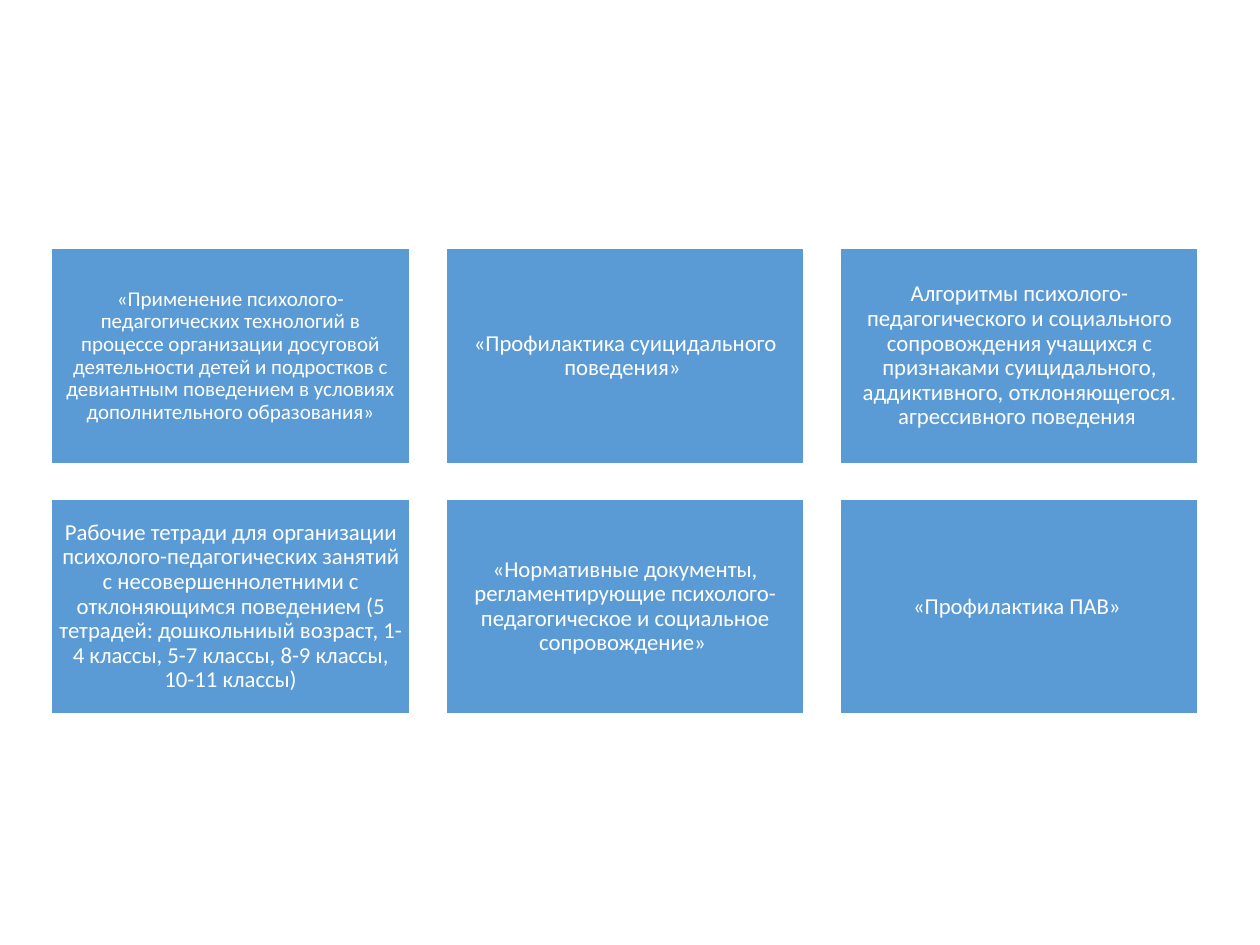
from pptx import Presentation
from pptx.dml.color import RGBColor
from pptx.enum import shapes, text
from pptx.util import Inches, Pt

BLUE = RGBColor(0x5B, 0x9B, 0xD5)
WHITE = RGBColor(0xFF, 0xFF, 0xFF)

# Card wording and text size, row by row
CARDS = [
    ("«Применение психолого-педагогических технологий в процессе организации "
     "досуговой деятельности детей и подростков с девиантным поведением "
     "в условиях дополнительного образования»", 12),
    ("«Профилактика суицидального поведения» ", 13),
    ("Алгоритмы психолого-педагогического и социального сопровождения учащихся "
     "с признаками суицидального, аддиктивного, отклоняющегося. "
     "агрессивного поведения ", 13),
    ("Рабочие тетради для организации психолого-педагогических занятий "
     "с несовершеннолетними с отклоняющимся поведением (5 тетрадей: "
     "дошкольниый возраст, 1-4 классы, 5-7 классы, 8-9 классы, "
     "10-11 классы)", 13),
    ("«Нормативные документы, регламентирующие психолого-педагогическое "
     "и социальное сопровождение» ", 13),
    ("«Профилактика ПАВ» ", 13),
]


def style(item, values):
    for name, value in values.items():
        setattr(item, name, value)


class Deck:
    # Card grid in inches: origin, card size, step between cards
    left, top = 0.41, 1.97
    wide, high = 2.84, 1.71
    step_x, step_y = 3.13, 1.99
    cols = 3

    frame = {"word_wrap": True, "vertical_anchor": text.MSO_ANCHOR.MIDDLE,
             **{f"margin_{side}": Inches(0.05)
                for side in ("left", "top", "right", "bottom")}}
    para = {"alignment": text.PP_ALIGN.CENTER, "line_spacing": 0.9}
    font = {"name": "Calibri"}

    def __init__(self, show):
        self.slide = show.slides.add_slide(show.slide_layouts[6])

    def card(self, index, words, size):
        row, col = divmod(index, self.cols)
        box = self.slide.shapes.add_shape(
            shapes.MSO_SHAPE.RECTANGLE,
            Inches(self.left + col * self.step_x),
            Inches(self.top + row * self.step_y),
            Inches(self.wide), Inches(self.high))
        box.shadow.inherit = False
        box.fill.solid()
        box.fill.fore_color.rgb = BLUE
        box.line.color.rgb = WHITE
        box.line.width = Pt(1)

        style(box.text_frame, self.frame)
        para = box.text_frame.paragraphs[0]
        style(para, self.para)
        run = para.add_run()
        run.text = words
        style(run.font, {**self.font, "size": Pt(size)})
        run.font.color.rgb = WHITE


def main():
    show = Presentation()
    style(show, {"slide_width": Inches(10), "slide_height": Inches(7.5)})
    deck = Deck(show)
    for index, (words, size) in enumerate(CARDS):
        deck.card(index, words, size)
    show.save("out.pptx")


if __name__ == "__main__":
    main()
